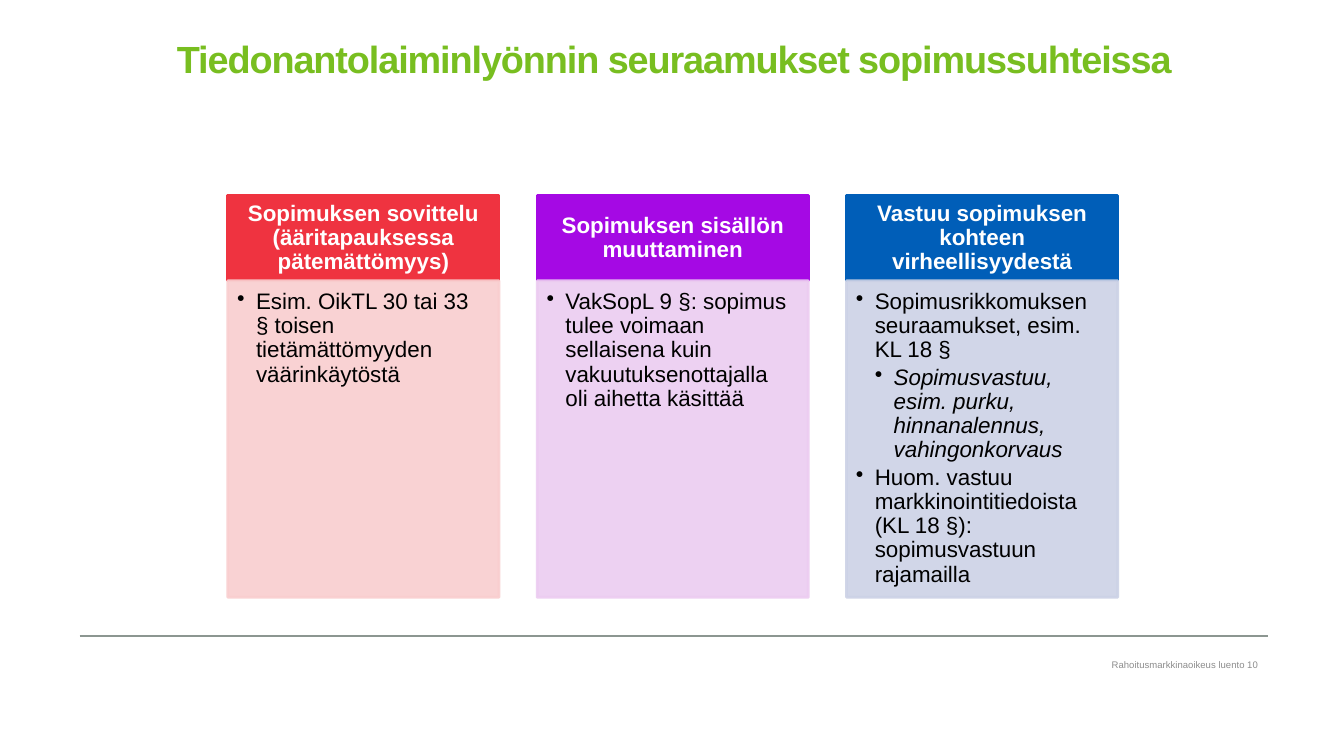
"""Build the slide on consequences of failing to disclose in contracts."""
from lxml import etree
from pptx import Presentation
from pptx.dml.color import RGBColor
from pptx.enum.shapes import MSO_CONNECTOR as Connector, MSO_SHAPE as Shape
from pptx.enum.text import MSO_ANCHOR as Anchor, PP_ALIGN as Align
from pptx.oxml.ns import qn
from pptx.util import Pt

TITLE = "Tiedonantolaiminlyönnin seuraamukset sopimussuhteissa"
FOOTER = "Rahoitusmarkkinaoikeus luento 10"
REMEDIES = [
    ("Sopimuksen sovittelu (ääritapauksessa pätemättömyys)", "EF3340", "F9CECF",
     [(1, "Esim. OikTL 30 tai 33 § toisen tietämättömyyden väärinkäytöstä")]),
    ("Sopimuksen sisällön muuttaminen", "A509E4", "ECCCF1",
     [(1, "VakSopL 9 §: sopimus tulee voimaan sellaisena kuin "
          "vakuutuksenottajalla oli aihetta käsittää")]),
    ("Vastuu sopimuksen kohteen virheellisyydestä", "005EB8", "CCD2E6",
     [(1, "Sopimusrikkomuksen seuraamukset, esim. KL 18 §"),
      (2, "Sopimusvastuu, esim. purku, hinnanalennus, vahingonkorvaus"),
      (1, "Huom. vastuu markkinointitiedoista (KL 18 §): "
          "sopimusvastuun rajamailla")]),
]
LEFT, STEP, WIDTH = 162.7, 221, 193.7
HEAD_TOP, HEAD_HEIGHT = 139.8, 60.8
BODY_TOP, BODY_HEIGHT = 200.6, 226.1
INDENT = 13.5


def rgb(value):
    return RGBColor.from_string(value)


def prepare(frame, insets, anchor=Anchor.TOP):
    frame.word_wrap = True
    frame.vertical_anchor = anchor
    (frame.margin_left, frame.margin_top,
     frame.margin_right, frame.margin_bottom) = map(Pt, insets)


def write(paragraph, text, *, size=16, color="000000", bold=False, italic=False,
          align=Align.LEFT, line=0.9, after=0, level=0, tracking=None):
    paragraph.alignment = align
    paragraph.line_spacing = line
    paragraph.space_before = Pt(0)
    paragraph.space_after = Pt(after)
    if level:
        paragraph.level = level
        properties = paragraph._p.get_or_add_pPr()
        properties.set("marL", str(Pt(INDENT * level)))
        properties.set("indent", str(-Pt(INDENT)))
        etree.SubElement(properties, qn("a:buChar")).set("char", "•")
    run = paragraph.add_run()
    run.text = text
    font = run.font
    font.name, font.size, font.bold, font.italic = "Arial", Pt(size), bold, italic
    font.color.rgb = rgb(color)
    if tracking is not None:
        run._r.get_or_add_rPr().set("spc", str(tracking))


def add_panel(slide, left, top, height, color, opacity=100):
    panel = slide.shapes.add_shape(
        Shape.RECTANGLE, Pt(left), Pt(top), Pt(WIDTH), Pt(height))
    panel.shadow.inherit = False
    panel.fill.solid()
    panel.fill.fore_color.rgb = rgb(color)
    panel.line.color.rgb = rgb(color)
    panel.line.width = Pt(2)
    if opacity < 100:
        for tint in panel._element.spPr.iter(qn("a:srgbClr")):
            etree.SubElement(tint, qn("a:alpha")).set("val", str(opacity * 1000))
    return panel


def main():
    deck = Presentation()
    deck.slide_width, deck.slide_height = Pt(960), Pt(540)
    slide = deck.slides.add_slide(deck.slide_layouts[5])

    rule = slide.shapes.add_connector(
        Connector.STRAIGHT, Pt(56.9), Pt(454.3), Pt(905.8), Pt(454.3))
    rule.line.color.rgb = rgb("8C9691")
    rule.line.width = Pt(0.75)
    etree.SubElement(rule._element.spPr, qn("a:effectLst"))

    title = slide.shapes.title
    title.left, title.top, title.width, title.height = map(
        Pt, (56.9, 30.2, 848.9, 94.3))
    prepare(title.text_frame, (0, 0, 0, 0))
    write(title.text_frame.paragraphs[0], TITLE, size=27, color="78BE20",
          bold=True, align=Align.CENTER, line=0.85, tracking=-80)

    for index, (heading, strong, pale, points) in enumerate(REMEDIES):
        left = LEFT + index * STEP
        head = add_panel(slide, left, HEAD_TOP, HEAD_HEIGHT, strong).text_frame
        prepare(head, (9, 5, 9, 5), Anchor.MIDDLE)
        write(head.paragraphs[0], heading, color="FFFFFF", bold=True,
              align=Align.CENTER)

        body = add_panel(slide, left, BODY_TOP, BODY_HEIGHT, pale, 90).text_frame
        prepare(body, (6.7, 6.7, 9, 10))
        for order, (level, point) in enumerate(points):
            paragraph = body.add_paragraph() if order else body.paragraphs[0]
            write(paragraph, point, level=level, italic=level == 2, after=2.4)

    footer = slide.shapes.add_textbox(
        Pt(518.4), Pt(468.7), Pt(380.2), Pt(12.2)).text_frame
    prepare(footer, (7.2, 3.6, 0, 3.6), Anchor.MIDDLE)
    write(footer.paragraphs[0], FOOTER, size=6.8, color="8C8C8C",
          align=Align.RIGHT, line=1.0)

    deck.save("out.pptx")


if __name__ == "__main__":
    main()
